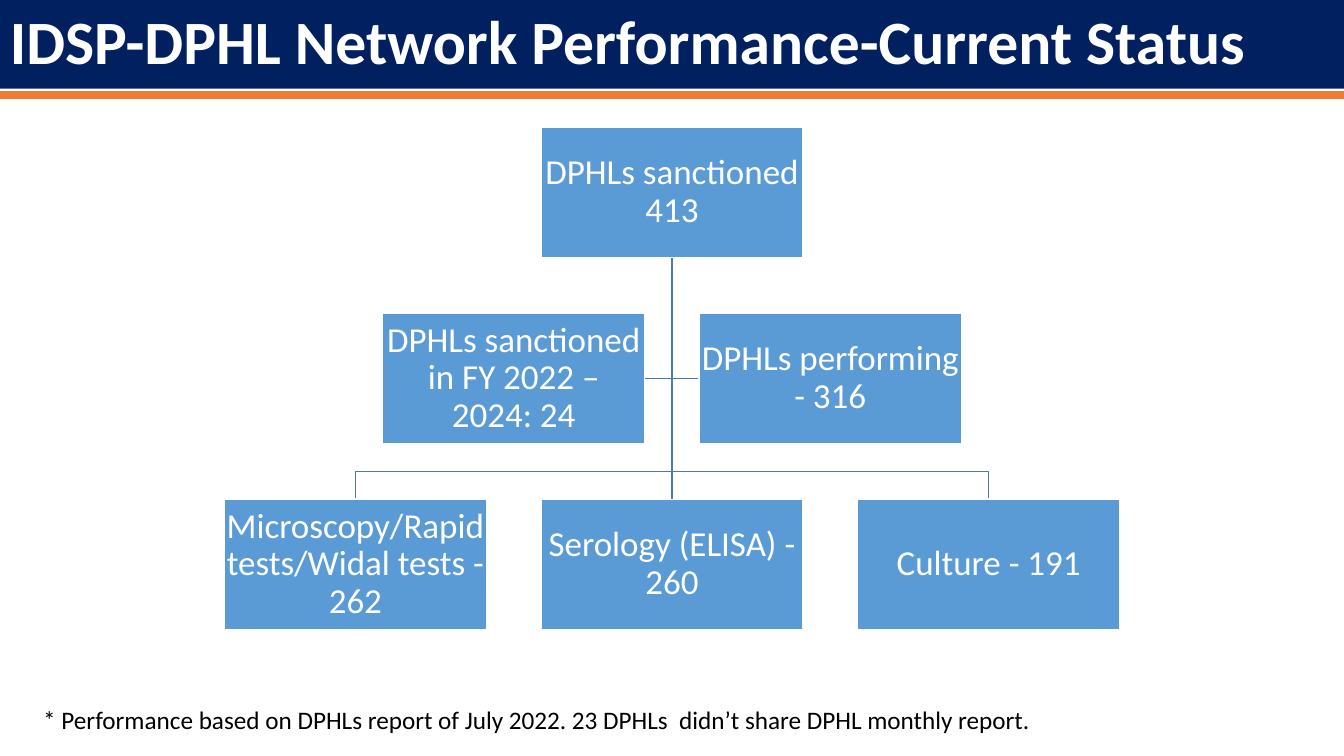
from lxml import etree
from pptx import Presentation
from pptx.dml.color import RGBColor
from pptx.enum.shapes import MSO_CONNECTOR as Connector, MSO_SHAPE as Shape
from pptx.enum.text import MSO_ANCHOR as Anchor, PP_ALIGN as Align
from pptx.oxml.ns import qn
from pptx.util import Inches, Pt

WIDTH, HEIGHT = 13.33, 7.5
CENTRE = WIDTH / 2
BOX_W, BOX_H = 2.6, 1.3
COLUMN, ROW, FIRST_ROW = 3.14, 1.845, 1.26
HALF_GAP = (COLUMN - BOX_W) / 2
NAVY, ORANGE, BLUE, LINK, WHITE, BLACK = (
    "002060", "ED7D31", "5B9BD5", "497CAB", "FFFFFF", "000000")


def colour(hex_code):
    """Turn a hex string into a colour."""
    return RGBColor.from_string(hex_code)


def write(frame, text, size, ink, bold=False, align=Align.LEFT, spacing=1.0):
    """Put one formatted paragraph into a text frame."""
    frame.word_wrap = True
    frame.text = text
    paragraph = frame.paragraphs[0]
    paragraph.alignment, paragraph.line_spacing = align, spacing
    font = paragraph.runs[0].font
    font.name, font.size, font.bold = "Calibri", Pt(size), bold
    font.color.rgb = colour(ink)


def add_panel(slide, left, top, width, height, fill, outline=None):
    """Add a flat rectangle with an optional outline."""
    panel = slide.shapes.add_shape(
        Shape.RECTANGLE, *map(Inches, (left, top, width, height)))
    panel.shadow.inherit = False
    panel.fill.solid()
    panel.fill.fore_color.rgb = colour(fill)
    if outline:
        panel.line.color.rgb = colour(outline)
        panel.line.width = Pt(1)
    else:
        panel.line.fill.background()
    panel.text_frame.vertical_anchor = Anchor.MIDDLE
    return panel


def add_box(slide, column, row, text):
    """Add a chart box, its column counted from the centre."""
    left = CENTRE + column * COLUMN - BOX_W / 2
    box = add_panel(slide, left, FIRST_ROW + row * ROW, BOX_W, BOX_H, BLUE, WHITE)
    frame = box.text_frame
    frame.margin_left = frame.margin_right = Inches(0.02)
    frame.margin_top = frame.margin_bottom = Inches(0.02)
    write(frame, text, 25, WHITE, align=Align.CENTER, spacing=0.9)
    return box


def add_branch(slide, *points):
    """Draw an open bent line through the points."""
    start, *rest = [(Inches(x), Inches(y)) for x, y in points]
    builder = slide.shapes.build_freeform(*start)
    builder.add_line_segments(rest, close=False)
    branch = builder.convert_to_shape()
    branch.shadow.inherit = False
    branch.fill.background()
    branch.line.color.rgb = colour(LINK)
    branch.line.width = Pt(1)


def add_trunk(slide, parent, child):
    """Join the bottom of one box to the top of another."""
    trunk = slide.shapes.add_connector(Connector.STRAIGHT, 0, 0, 0, 0)
    trunk.begin_connect(parent, 2)
    trunk.end_connect(child, 0)
    trunk.line.color.rgb = colour(LINK)
    trunk.line.width = Pt(1)
    etree.SubElement(trunk._element.spPr, qn("a:effectLst"))


def add_chart(slide):
    """Draw the hierarchy of laboratories."""
    root_bottom = FIRST_ROW + BOX_H
    middle = FIRST_ROW + ROW + BOX_H / 2
    leaf_top = FIRST_ROW + 2 * ROW
    for side in (1, -1):
        edge, leaf = CENTRE + side * HALF_GAP, CENTRE + side * COLUMN
        add_branch(slide, (CENTRE, root_bottom), (CENTRE, middle), (edge, middle))
        add_branch(slide, (CENTRE, root_bottom), (CENTRE, leaf_top - HALF_GAP),
                   (leaf, leaf_top - HALF_GAP), (leaf, leaf_top))
    sanctioned = add_box(slide, 0, 0, "DPHLs sanctioned 413")
    add_box(slide, -1, 2, "Microscopy/Rapid tests/Widal tests - 262")
    serology = add_box(slide, 0, 2, "Serology (ELISA) - 260")
    add_box(slide, 1, 2, "Culture - 191")
    add_box(slide, -0.5, 1, "DPHLs sanctioned in FY 2022 – 2024: 24")
    add_box(slide, 0.5, 1, "DPHLs performing - 316")
    add_trunk(slide, sanctioned, serology)


def add_footnote(slide, text):
    """Add the note below the chart."""
    note = slide.shapes.add_textbox(*map(Inches, (0.33, 6.94, 12.61, 0.4)))
    write(note.text_frame, text, 18, BLACK)


def main():
    """Build and save the slide."""
    deck = Presentation()
    deck.slide_width, deck.slide_height = Inches(WIDTH), Inches(HEIGHT)
    slide = deck.slides.add_slide(deck.slide_layouts[6])
    add_panel(slide, 0, 0.91, WIDTH, 0.07, ORANGE, ORANGE)
    add_chart(slide)
    add_footnote(slide, "* Performance based on DPHLs report of July 2022. "
                        "23 DPHLs  didn’t share DPHL monthly report.")
    title = add_panel(slide, 0, 0, WIDTH, 0.88, NAVY)
    write(title.text_frame, "IDSP-DPHL Network Performance-Current Status",
          44, WHITE, bold=True, spacing=0.9)
    deck.save("out.pptx")


if __name__ == "__main__":
    main()
